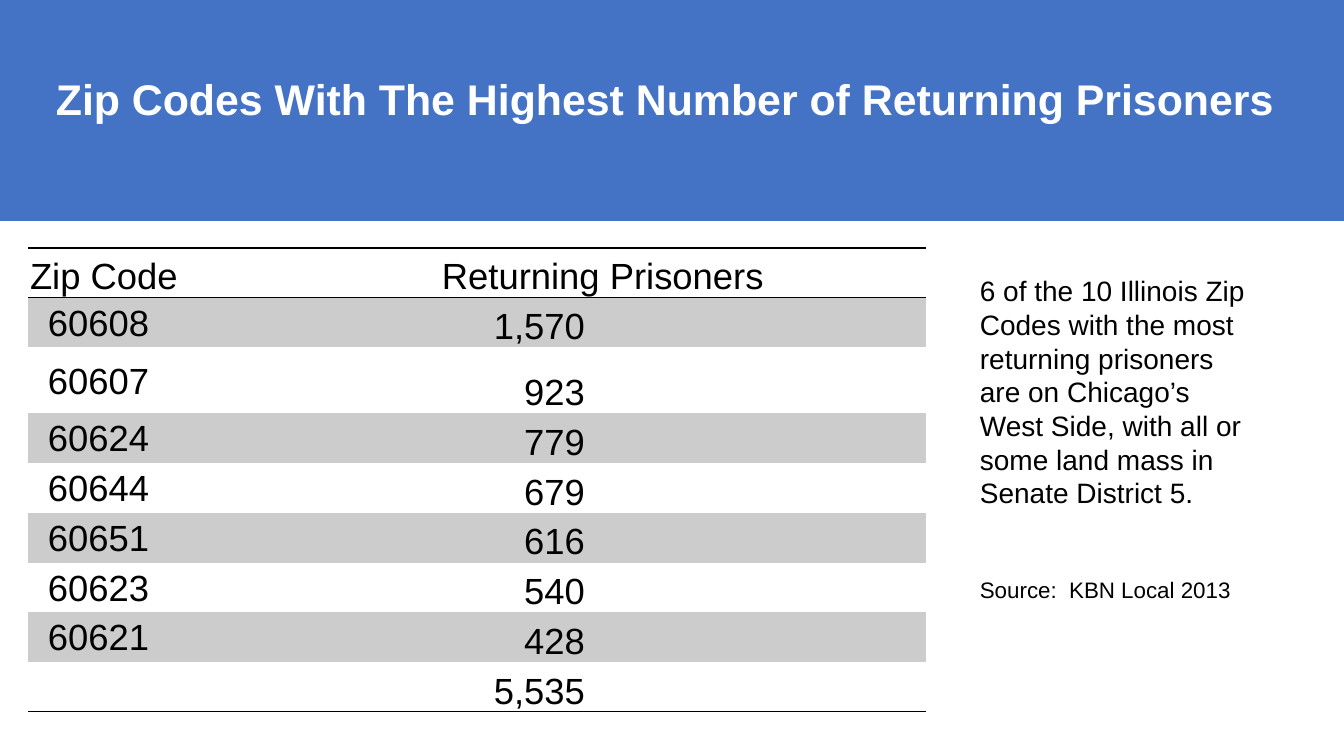
import dataclasses

import pptx
import pptx.dml.color
import pptx.enum.shapes
import pptx.enum.text
import pptx.oxml
import pptx.oxml.ns
import pptx.util

SLIDE_WIDTH, SLIDE_HEIGHT = 1344, 756
EMU_PER_PX = 12192000 / SLIDE_WIDTH
NO_TABLE_STYLE = "{2D5ABB26-0587-4C30-8999-92F81FD0307C}"

HEADINGS = ("Zip Code", "Returning Prisoners")
PRISONERS_BY_ZIP = [
    ("60608", "1,570"),
    ("60607", "923"),
    ("60624", "779"),
    ("60644", "679"),
    ("60651", "616"),
    ("60623", "540"),
    ("60621", "428"),
    ("", "5,535"),
]
TALL_ROW = 2


@dataclasses.dataclass(frozen=True)
class Theme:
    font: str = "Arial"
    banner: str = "4472C4"
    title: str = "FFFFFF"
    ink: str = "000000"
    band: str = "CCCCCC"
    title_size: float = 30.6
    table_size: int = 26
    comment_size: int = 20
    source_size: int = 16


THEME = Theme()
ALIGN = pptx.enum.text.PP_ALIGN
ANCHOR = pptx.enum.text.MSO_ANCHOR


def px(length):
    return pptx.util.Emu(round(length * EMU_PER_PX))


def rgb(value):
    return pptx.dml.color.RGBColor.from_string(value)


def style(paragraph, size, color=THEME.ink, bold=False):
    for run in paragraph.runs:
        run.font.name = THEME.font
        run.font.size = pptx.util.Pt(size)
        run.font.bold = bold
        run.font.color.rgb = rgb(color)


def add_banner(slide, height):
    banner = slide.shapes.add_shape(
        pptx.enum.shapes.MSO_SHAPE.RECTANGLE, 0, 0, px(SLIDE_WIDTH), px(height))
    banner.shadow.inherit = False
    banner.fill.solid()
    banner.fill.fore_color.rgb = rgb(THEME.banner)
    banner.line.fill.background()


def add_text_frame(slide, left, top, width, height):
    frame = slide.shapes.add_textbox(px(left), px(top), px(width), px(height)).text_frame
    frame.word_wrap = True
    return frame


def add_title(slide, title):
    frame = add_text_frame(slide, 46, 27, 1265, 103)
    frame.vertical_anchor = ANCHOR.BOTTOM
    frame.text = title
    frame.paragraphs[0].line_spacing = 0.9
    style(frame.paragraphs[0], THEME.title_size, THEME.title, bold=True)


def add_rules(cell, sides):
    """Draw horizontal rules on the given sides of a cell, "T" before "B"."""
    namespace = pptx.oxml.ns.nsdecls("a")
    for side in sides:
        cell._tc.get_or_add_tcPr().append(pptx.oxml.parse_xml(
            f'<a:ln{side} {namespace} w="12700"><a:solidFill>'
            f'<a:srgbClr val="{THEME.ink}"/></a:solidFill></a:ln{side}>'))


def fill_cell(cell, text, left_inset, right_inset, anchor, align):
    cell.margin_left, cell.margin_right = px(left_inset), px(right_inset)
    cell.margin_top, cell.margin_bottom = px(2), 0
    cell.vertical_anchor = anchor
    cell.text = text
    cell.text_frame.paragraphs[0].alignment = align
    style(cell.text_frame.paragraphs[0], THEME.table_size)


def add_zip_table(slide):
    column_widths = (402, 496)
    height, tall_height = 464, 66
    rows = [HEADINGS] + PRISONERS_BY_ZIP
    last = len(rows) - 1
    row_height = (height - tall_height) / last
    frame = slide.shapes.add_table(
        len(rows), 2, px(28), px(248), px(sum(column_widths)), px(height))
    table = frame.table
    table.first_row = table.horz_banding = False
    frame._element.xpath(".//a:tableStyleId")[0].text = NO_TABLE_STYLE
    for column, width in zip(table.columns, column_widths):
        column.width = px(width)

    for index, (zip_code, prisoners) in enumerate(rows):
        table.rows[index].height = px(tall_height if index == TALL_ROW else row_height)
        zip_cell, count_cell = table.cell(index, 0), table.cell(index, 1)
        if index == 0:
            fill_cell(zip_cell, zip_code, 2, 2, ANCHOR.BOTTOM, ALIGN.LEFT)
            fill_cell(count_cell, prisoners, 12, 2, ANCHOR.BOTTOM, ALIGN.LEFT)
        else:
            fill_cell(zip_cell, zip_code, 20, 2, ANCHOR.MIDDLE, ALIGN.LEFT)
            fill_cell(count_cell, prisoners, 2, 341, ANCHOR.BOTTOM, ALIGN.RIGHT)
        for cell in (zip_cell, count_cell):
            add_rules(cell, {0: "TB", last: "B"}.get(index, ""))
            if index % 2:
                cell.fill.solid()
                cell.fill.fore_color.rgb = rgb(THEME.band)
            else:
                cell.fill.background()


def add_comment(slide, comment, source):
    frame = add_text_frame(slide, 970, 269, 290, 343)
    frame.text = comment
    style(frame.paragraphs[0], THEME.comment_size)
    source_line = frame.add_paragraph()
    source_line.text = source
    source_line.space_before = pptx.util.Pt(48)
    style(source_line, THEME.source_size)


def main():
    deck = pptx.Presentation()
    deck.slide_width, deck.slide_height = px(SLIDE_WIDTH), px(SLIDE_HEIGHT)
    slide = deck.slides.add_slide(deck.slide_layouts[6])
    add_banner(slide, 221)
    add_title(slide, "Zip Codes With The Highest Number of Returning Prisoners")
    add_zip_table(slide)
    add_comment(
        slide,
        "6 of the 10 Illinois Zip Codes with the most returning prisoners are on "
        "Chicago’s West Side, with all or some land mass in Senate District 5.",
        "Source:  KBN Local 2013")
    deck.save("out.pptx")


if __name__ == "__main__":
    main()
